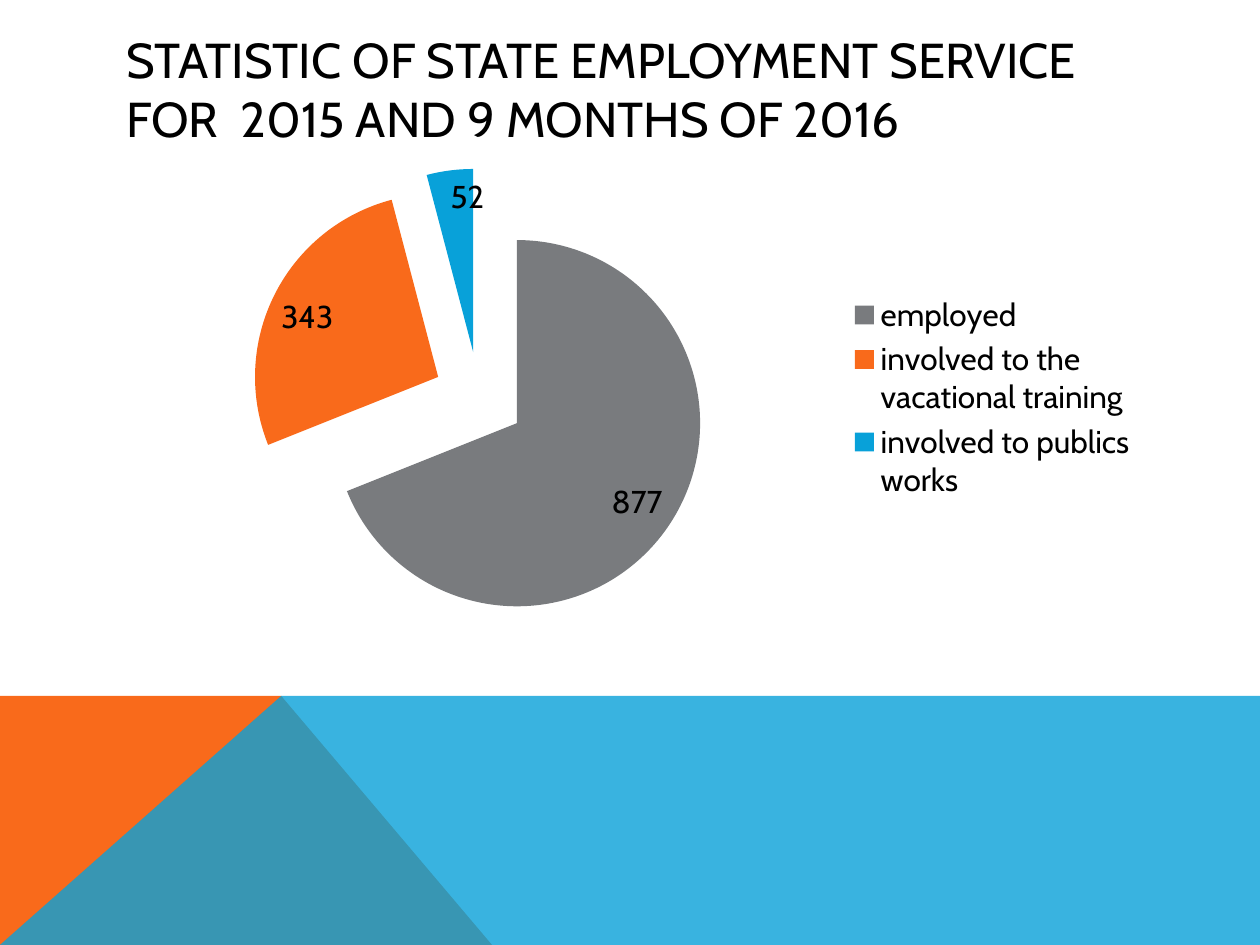
import pptx
import pptx.chart.data
import pptx.dml.color
import pptx.enum.chart
import pptx.enum.text
import pptx.oxml
import pptx.oxml.ns
import pptx.util
from pptx.util import Cm

# Content
TITLE = "STATISTIC OF STATE EMPLOYMENT SERVICE  FOR  2015 AND 9 MONTHS OF 2016"
SERVICES = [
    ("employed ", 877, "grey"),
    ("involved to the vacational training", 343, "orange"),
    ("involved to publics works", 52, "blue"),
]
EXPLOSION = 25  # percent of the pie radius

THEME = {
    "font": "Cabin", "title_size": 28, "chart_size": 18,
    "text": "000000", "grey": "797B7E", "orange": "F96A1B", "blue": "08A1D9",
}

# Geometry in centimetres
WIDTH, HEIGHT = 25.4, 19.05
BAND_TOP, PEAK_X, SLOPE_END_X = 14.03, 5.67, 9.92
BANDS = [  # outline, colour, opacity in percent
    ([(0, HEIGHT), (0, BAND_TOP), (PEAK_X, BAND_TOP), (SLOPE_END_X, HEIGHT)], "orange", 100),
    ([(0, HEIGHT), (PEAK_X, BAND_TOP), (WIDTH, BAND_TOP), (WIDTH, HEIGHT)], "blue", 80),
]
TITLE_BOX = (2.29, 1.02, 20.88, 1.52)
CHART_BOX = (2.29, 3.05, 20.9, 9.93)


def color(name):
    return pptx.dml.color.RGBColor.from_string(THEME[name])


def style_font(font, size):
    font.name = THEME["font"]
    font.size = pptx.util.Pt(THEME[size])
    font.color.rgb = color("text")


def paint(fill, name):
    fill.solid()
    fill.fore_color.rgb = color(name)


def add_band(slide, outline, name, opacity):
    corners = [(Cm(x), Cm(y)) for x, y in outline]
    builder = slide.shapes.build_freeform(*corners[0])
    builder.add_line_segments(corners[1:], close=True)
    band = builder.convert_to_shape()
    band.shadow.inherit = False
    band.line.fill.background()
    paint(band.fill, name)
    if opacity < 100:
        tint = band.fill._xPr.find(".//" + pptx.oxml.ns.qn("a:srgbClr"))
        alpha = pptx.oxml.parse_xml(
            f'<a:alpha {pptx.oxml.ns.nsdecls("a")} val="{opacity * 1000}"/>')
        tint.append(alpha)


def set_title(slide):
    title = slide.shapes.title
    title.left, title.top, title.width, title.height = map(Cm, TITLE_BOX)
    frame = title.text_frame
    frame.text = TITLE
    frame.word_wrap = True
    frame.auto_size = pptx.enum.text.MSO_AUTO_SIZE.NONE
    frame.vertical_anchor = pptx.enum.text.MSO_ANCHOR.MIDDLE
    paragraph = frame.paragraphs[0]
    paragraph.alignment = pptx.enum.text.PP_ALIGN.LEFT
    style_font(paragraph.runs[0].font, "title_size")


def add_services_pie(slide):
    data = pptx.chart.data.CategoryChartData()
    data.categories = [label for label, _, _ in SERVICES]
    data.add_series("Series 1", [value for _, value, _ in SERVICES])
    pie = slide.shapes.add_chart(
        pptx.enum.chart.XL_CHART_TYPE.PIE, *map(Cm, CHART_BOX), data).chart
    pie.has_title = False
    style_font(pie.font, "chart_size")

    # Legend
    pie.has_legend = True
    pie.legend.position = pptx.enum.chart.XL_LEGEND_POSITION.RIGHT
    pie.legend.include_in_layout = False

    # Slices
    plot = pie.plots[0]
    plot.vary_by_categories = True
    series = plot.series[0]
    for index, (_, _, name) in enumerate(SERVICES):
        paint(series.points[index].format.fill, name)
    explosion = pptx.oxml.parse_xml(
        f'<c:explosion {pptx.oxml.ns.nsdecls("c")} val="{EXPLOSION}"/>')
    series._element.find(pptx.oxml.ns.qn("c:tx")).addnext(explosion)

    # Value labels
    labels = series.data_labels
    labels.show_value = True
    labels.show_percentage = False
    labels.position = pptx.enum.chart.XL_LABEL_POSITION.INSIDE_END
    style_font(labels.font, "chart_size")


def main():
    deck = pptx.Presentation()
    deck.slide_width, deck.slide_height = Cm(WIDTH), Cm(HEIGHT)
    slide = deck.slides.add_slide(deck.slide_layouts[5])
    for band in BANDS:
        add_band(slide, *band)
    set_title(slide)
    add_services_pie(slide)
    deck.save("out.pptx")


if __name__ == "__main__":
    main()
